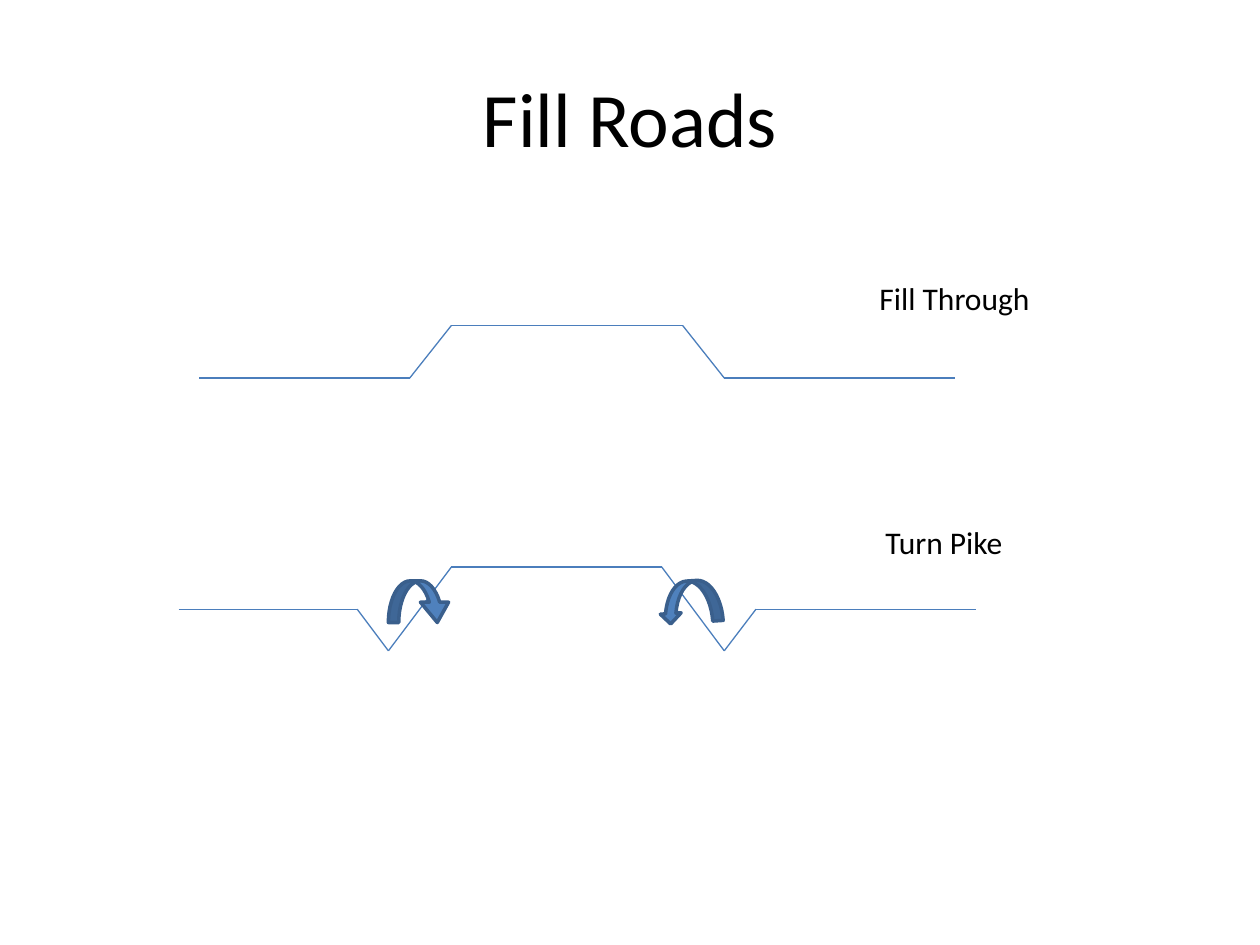
from dataclasses import dataclass
from itertools import pairwise

from lxml.etree import SubElement
from pptx import Presentation
from pptx.dml.color import RGBColor
from pptx.enum.shapes import MSO_CONNECTOR, MSO_SHAPE
from pptx.enum.text import MSO_ANCHOR, MSO_AUTO_SIZE, PP_ALIGN
from pptx.oxml.ns import qn
from pptx.shapes.shapetree import GroupShapes
from pptx.slide import Slide
from pptx.text.text import TextFrame
from pptx.util import Cm, Pt


@dataclass(frozen=True)
class Theme:
    """Colours, font and sizes of the slide."""

    font: str = "Calibri"
    ink: RGBColor = RGBColor(0x00, 0x00, 0x00)
    ground: RGBColor = RGBColor(0x4B, 0x7E, 0xBC)
    soil: RGBColor = RGBColor(0x4F, 0x81, 0xBD)
    soil_edge: RGBColor = RGBColor(0x3A, 0x5F, 0x8C)
    title_size: Pt = Pt(44)
    label_size: Pt = Pt(18)
    ground_width: Pt = Pt(0.75)
    soil_edge_width: Pt = Pt(2)


@dataclass(frozen=True)
class RoadProfile:
    """A road cross-section and its label, in centimetres."""

    label: str
    label_box: tuple[float, float, float, float]
    points: tuple[tuple[float, float], ...]


@dataclass(frozen=True)
class SoilArrow:
    """A curved arrow for soil moved from a ditch to the road."""

    preset: MSO_SHAPE
    left: float
    rotation: float = 0
    adjustments: tuple[float, ...] = ()


THEME = Theme()

PROFILES = (
    RoadProfile(
        "Fill Through",
        (17.48, 5.51, 3.58, 1.02),
        ((4.02, 7.62), (8.26, 7.62), (9.1, 6.56),
         (13.76, 6.56), (14.6, 7.62), (19.26, 7.62)),
    ),
    RoadProfile(
        "Turn Pike",
        (17.6, 10.41, 2.9, 1.02),
        ((3.6, 12.28), (7.2, 12.28), (7.83, 13.12), (9.1, 11.43),
         (13.34, 11.43), (14.6, 13.12), (15.24, 12.28), (19.68, 12.28)),
    ),
)

SOIL_ARROWS = (
    SoilArrow(MSO_SHAPE.CURVED_DOWN_ARROW, 7.83, adjustments=(0.25, 0.676, 0.487)),
    SoilArrow(MSO_SHAPE.CURVED_UP_ARROW, 13.28, rotation=176.1),
)


def format_text(frame: TextFrame, size: Pt, alignment: PP_ALIGN) -> None:
    """Apply the theme font to every run."""
    for paragraph in frame.paragraphs:
        paragraph.alignment = alignment
        for run in paragraph.runs:
            run.font.name = THEME.font
            run.font.size = size
            run.font.color.rgb = THEME.ink


def add_title(slide: Slide, heading: str) -> None:
    """Fill and place the title placeholder."""
    title = slide.shapes.title
    title.left, title.top, title.width, title.height = map(Cm, (1.27, 0.76, 22.86, 3.18))
    title.text_frame.text = heading
    title.text_frame.vertical_anchor = MSO_ANCHOR.MIDDLE
    format_text(title.text_frame, THEME.title_size, PP_ALIGN.CENTER)


def add_profile(slide: Slide, profile: RoadProfile) -> None:
    """Draw the ground line of a road, segment by segment."""
    segments = slide.shapes.add_group_shape().shapes
    for start, end in pairwise(profile.points):
        segment = segments.add_connector(
            MSO_CONNECTOR.STRAIGHT, *map(Cm, start), *map(Cm, end)
        )
        segment.line.color.rgb = THEME.ground
        segment.line.width = THEME.ground_width
        SubElement(segment._element.spPr, qn("a:effectLst"))


def add_soil_arrow(arrows: GroupShapes, soil: SoilArrow) -> None:
    """Draw one curved arrow."""
    arrow = arrows.add_shape(soil.preset, *map(Cm, (soil.left, 11.71, 1.27, 0.84)))
    arrow.rotation = soil.rotation
    for index, value in enumerate(soil.adjustments):
        arrow.adjustments[index] = value
    arrow.shadow.inherit = False
    arrow.fill.solid()
    arrow.fill.fore_color.rgb = THEME.soil
    arrow.line.color.rgb = THEME.soil_edge
    arrow.line.width = THEME.soil_edge_width


def add_label(slide: Slide, profile: RoadProfile) -> None:
    """Write the name of a road profile."""
    frame = slide.shapes.add_textbox(*map(Cm, profile.label_box)).text_frame
    frame.text = profile.label
    frame.word_wrap = False
    frame.auto_size = MSO_AUTO_SIZE.SHAPE_TO_FIT_TEXT
    format_text(frame, THEME.label_size, PP_ALIGN.LEFT)


def main() -> None:
    """Build and save the slide."""
    deck = Presentation()
    deck.slide_width, deck.slide_height = Cm(25.4), Cm(19.05)
    slide = deck.slides.add_slide(deck.slide_layouts.get_by_name("Title Only"))
    add_title(slide, "Fill Roads")
    for profile in PROFILES:
        add_profile(slide, profile)
    arrows = slide.shapes.add_group_shape().shapes
    for soil in SOIL_ARROWS:
        add_soil_arrow(arrows, soil)
    for profile in PROFILES:
        add_label(slide, profile)
    deck.save("out.pptx")


if __name__ == "__main__":
    main()
